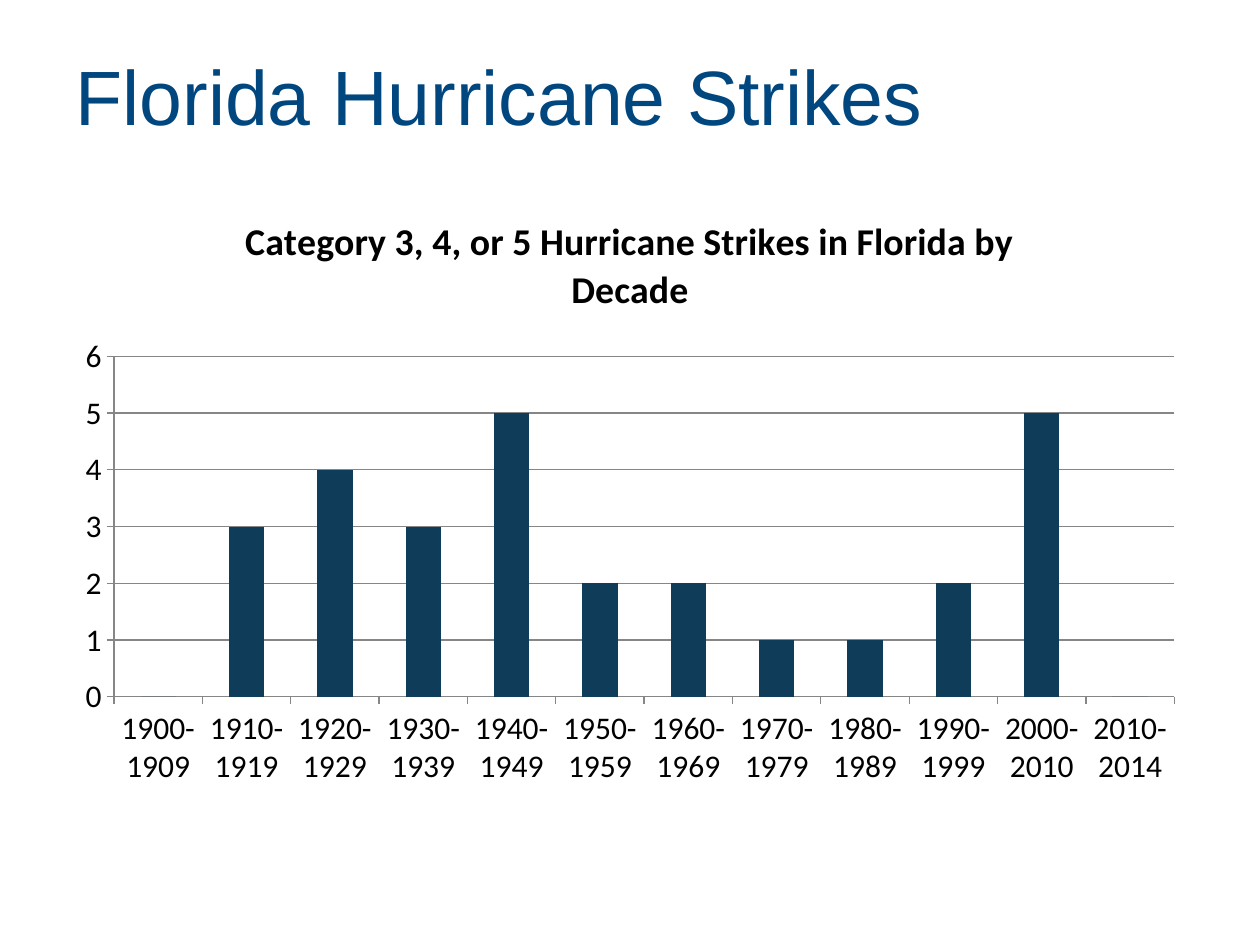
from pptx import Presentation
from pptx.chart.data import CategoryChartData
from pptx.dml.color import RGBColor
from pptx.enum.chart import XL_CHART_TYPE as ChartType, XL_TICK_MARK as TickMark
from pptx.enum.text import MSO_ANCHOR as Anchor, PP_ALIGN as Align
from pptx.util import Inches, Pt

TITLE_BLUE = RGBColor(0x00, 0x46, 0x7F)
BAR_NAVY = RGBColor(0x0F, 0x3D, 0x59)
AXIS_GRAY = RGBColor(0x86, 0x86, 0x86)
BLACK = RGBColor(0x00, 0x00, 0x00)

STRIKES = {
    "1900-1909": 0, "1910-1919": 3, "1920-1929": 4, "1930-1939": 3,
    "1940-1949": 5, "1950-1959": 2, "1960-1969": 2, "1970-1979": 1,
    "1980-1989": 1, "1990-1999": 2, "2000-2010": 5, "2010-2014": 0,
}


def write_text(frame, text, size, color, font="Arial", bold=False, align=None):
    paragraph = frame.paragraphs[0]
    paragraph.alignment = align
    run = paragraph.add_run()
    run.text = text
    run.font.name = font
    run.font.size = Pt(size)
    run.font.bold = bold
    run.font.color.rgb = color


prs = Presentation()
prs.slide_width = Inches(10)
prs.slide_height = Inches(7.5)
slide = prs.slides.add_slide(prs.slide_layouts[5])

heading = slide.shapes.title
heading.left, heading.top = Inches(0.5), Inches(0.17)
heading.width, heading.height = Inches(9), Inches(1.17)
heading.text_frame.vertical_anchor = Anchor.MIDDLE
write_text(heading.text_frame, "Florida Hurricane Strikes", size=44,
           color=TITLE_BLUE, align=Align.LEFT)

strike_data = CategoryChartData()
strike_data.categories = list(STRIKES)
strike_data.add_series("Series 1", list(STRIKES.values()))
chart = slide.shapes.add_chart(
    ChartType.COLUMN_CLUSTERED, Inches(0.5), Inches(1.5), Inches(9), Inches(4.83),
    strike_data).chart
chart.font.name = "Calibri"
chart.font.size = Pt(18)
chart.font.color.rgb = BLACK
chart.has_legend = False
chart.has_title = True
chart.chart_title.include_in_layout = False
write_text(chart.chart_title.text_frame,
           "Category 3, 4, or 5 Hurricane Strikes in Florida by Decade",
           size=21.6, color=BLACK, font="Calibri", bold=True)

bars = chart.plots[0]
bars.gap_width = 150
bars.vary_by_categories = False
bar_fill = bars.series[0].format.fill
bar_fill.solid()
bar_fill.fore_color.rgb = BAR_NAVY

decades, counts = chart.category_axis, chart.value_axis
counts.minimum_scale, counts.maximum_scale, counts.major_unit = 0, 6, 1
counts.has_major_gridlines = True
for axis in (decades, counts):
    axis.major_tick_mark = TickMark.OUTSIDE
    axis.minor_tick_mark = TickMark.NONE
for part in (decades, counts, counts.major_gridlines):
    part.format.line.color.rgb = AXIS_GRAY
    part.format.line.width = Pt(0.75)

prs.save("out.pptx")
